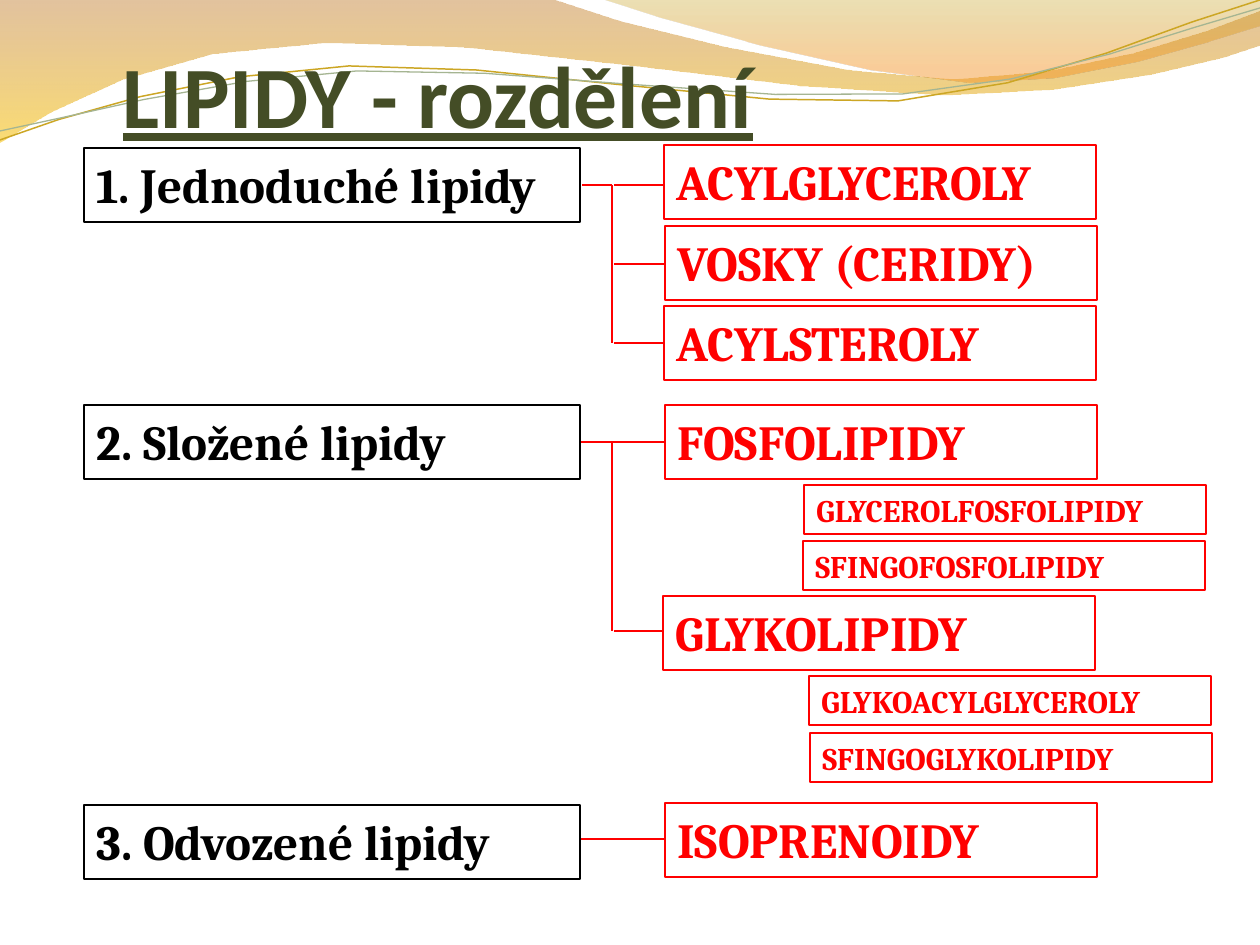
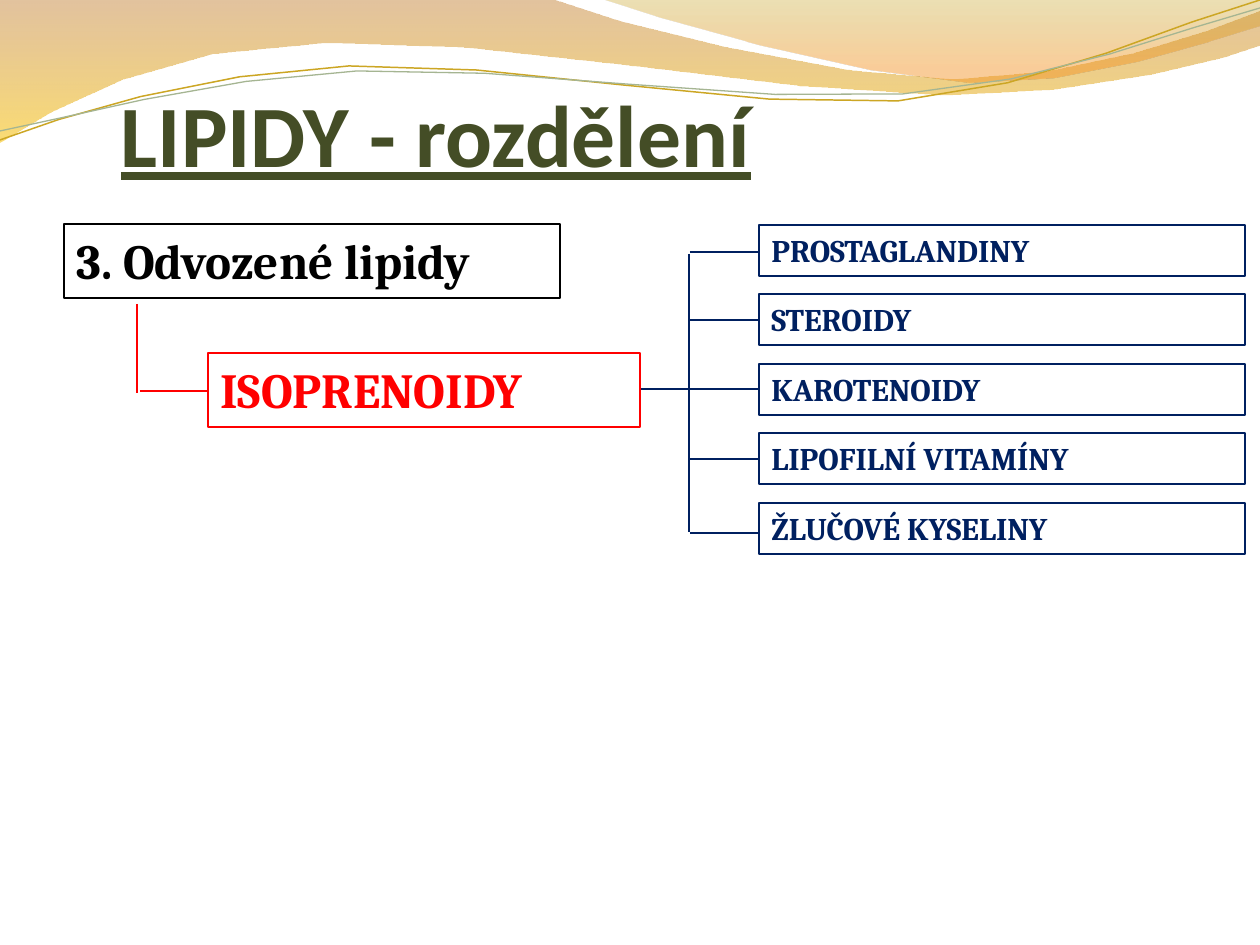
import dataclasses

import pptx
import pptx.dml.color
import pptx.enum.shapes
import pptx.enum.text
import pptx.oxml
import pptx.oxml.ns
import pptx.util

PX = 914400 / 126  # EMU in one px
STEPS = 4  # straight pieces in one curve


@dataclasses.dataclass(frozen=True)
class Theme:
    head: str = "Calibri"
    body: str = "Cambria"
    olive: str = "444D26"
    black: str = "000000"
    red: str = "FF0000"
    navy: str = "002060"
    title: int = 50
    large: int = 28
    small: int = 18
    edge: float = 0.75
    link: float = 1


T = Theme()
rgb = pptx.dml.color.RGBColor.from_string
qn = pptx.oxml.ns.qn


def text(slide, words, x, y, w, h, *, size=T.large, color=T.red, font=T.body,
         wrap=False, title=False):
    """Add bold text: in an outlined box, or as an underlined title."""
    spot = [round(v * PX) for v in (x, y, w, h)]
    if title:
        box = slide.shapes.add_textbox(*spot)
    else:
        box = slide.shapes.add_shape(pptx.enum.shapes.MSO_SHAPE.RECTANGLE, *spot)
        box.shadow.inherit = False
        box.fill.background()
        box.line.color.rgb = rgb(color)
        box.line.width = pptx.util.Pt(T.edge)
    frame = box.text_frame
    frame.word_wrap = wrap
    if title:
        frame.margin_left = frame.margin_right = frame.margin_bottom = 0
        frame.vertical_anchor = pptx.enum.text.MSO_ANCHOR.BOTTOM
    else:
        frame.auto_size = pptx.enum.text.MSO_AUTO_SIZE.SHAPE_TO_FIT_TEXT
        frame.vertical_anchor = pptx.enum.text.MSO_ANCHOR.TOP
    para = frame.paragraphs[0]
    para.alignment = pptx.enum.text.PP_ALIGN.LEFT
    run = para.add_run()
    run.text = words
    run.font.name = font
    run.font.size = pptx.util.Pt(size)
    run.font.bold = True
    if title:
        run.font.underline = True
    run.font.color.rgb = rgb(color)


def link(slide, x1, y1, x2, y2, color=T.red):
    line = slide.shapes.add_connector(
        pptx.enum.shapes.MSO_CONNECTOR.STRAIGHT, *(round(v * PX) for v in (x1, y1, x2, y2)))
    line.line.color.rgb = rgb(color)
    line.line.width = pptx.util.Pt(T.link)
    line._element.spPr.append(pptx.oxml.parse_xml(
        '<a:effectLst xmlns:a="http://schemas.openxmlformats.org/drawingml/2006/main"/>'))


# Each wave: start, then points (2 numbers) or curves (6 numbers), then its look.
# Bands list gradient stops (place, colour, opacity); strokes give colour and width.
waves = [
    ((0, 0), [(554, 0), (600, 21, 837, 79, 955, 79), (1075, 79, 1207, 33, 1260, 11),
              (1260, 45), (1239, 55, 1096, 96, 940, 95), (781, 95, 481, 35, 324, 43),
              (162, 45, 58, 105, 0, 142)],
     {"stops": [(0, "C07A28", 45), (1, "F7BF00", 55)]}),
    ((604, 0), [(641, 14, 859, 78, 969, 82), (1079, 87, 1211, 40, 1260, 26), (1260, 0)],
     {"stops": [(0, "C09709", 30), (0.8, "F59320", 45)]}),
    ((0, 140), [(60, 117, 199, 72, 349, 66), (498, 59, 747, 112, 898, 101),
                (1050, 89, 1182, 19, 1260, 0)],
     {"color": "CCA624", "width": 0.85}),
    ((0, 131), [(59, 121, 207, 77, 357, 71), (508, 64, 752, 106, 903, 94),
                (1053, 84, 1186, 26, 1260, 8)],
     {"color": "A5B592", "width": 0.75}),
]

deck = pptx.Presentation()
deck.slide_width = round(1260 * PX)
deck.slide_height = round(945 * PX)
heads = [(123, 26, 656, 120), (121, 28, 1134, 157)]
slides = []

for place in heads:
    slide = deck.slides.add_slide(deck.slide_layouts[6])
    slides.append(slide)
    for start, parts, look in waves:
        dots = [start]
        for part in parts:
            if len(part) == 2:
                dots.append(part)
                continue
            ax, ay = dots[-1]
            bx, by, cx, cy, dx, dy = part
            for step in range(1, STEPS + 1):
                t = step / STEPS
                u = 1 - t
                k = (u**3, 3 * u * u * t, 3 * u * t * t, t**3)
                dots.append((k[0] * ax + k[1] * bx + k[2] * cx + k[3] * dx,
                             k[0] * ay + k[1] * by + k[2] * cy + k[3] * dy))
        dots = [(round(x * PX), round(y * PX)) for x, y in dots]
        pen = slide.shapes.build_freeform(*dots[0])
        pen.add_line_segments(dots[1:], close="stops" in look)
        wave = pen.convert_to_shape()
        wave.shadow.inherit = False
        if "stops" in look:
            wave.line.fill.background()
            wave.fill.gradient()
            wave.fill.gradient_angle = 270
            for stop, (spot, color, _) in zip(wave.fill.gradient_stops, look["stops"]):
                stop.position = spot
                stop.color.rgb = rgb(color)
            tints = wave._element.spPr.iter(qn("a:srgbClr"))
            for tint, (_, _, alpha) in zip(list(tints), look["stops"]):
                tint.append(pptx.oxml.parse_xml(
                    '<a:alpha xmlns:a="http://schemas.openxmlformats.org/drawingml/2006/main"'
                    f' val="{alpha * 1000}"/>'))
        else:
            wave.fill.background()
            wave.line.color.rgb = rgb(look["color"])
            wave.line.width = pptx.util.Pt(look["width"])
    text(slide, "LIPIDY - rozdělení", *place,
         size=T.title, color=T.olive, font=T.head, wrap=True, title=True)

first, second = slides

# Slide 1: three classes, their groups and subgroups
for words, y in [("1. Jednoduché lipidy", 148), ("2. Složené lipidy", 405),
                 ("3. Odvozené lipidy", 805)]:
    text(first, words, 84, y, 496, 74, color=T.black)

for words, x, y in [("ACYLGLYCEROLY", 664, 145), ("VOSKY (CERIDY)", 665, 226),
                    ("ACYLSTEROLY", 664, 306), ("FOSFOLIPIDY", 665, 405),
                    ("GLYKOLIPIDY", 663, 596), ("ISOPRENOIDY", 665, 803)]:
    text(first, words, x, y, 432, 74)

for words, x, y in [("GLYCEROLFOSFOLIPIDY", 804, 485), ("SFINGOFOSFOLIPIDY", 803, 541),
                    ("GLYKOACYLGLYCEROLY", 809, 676), ("SFINGOGLYKOLIPIDY", 810, 733)]:
    text(first, words, x, y, 402, 49, size=T.small)

for y in (185, 264, 343, 631):
    link(first, 614, y, 664, y)
for top, end in [(185, 343), (442, 631)]:
    link(first, 612, top, 612, end)
for left, right, y in [(582, 612, 185), (581, 665, 442), (581, 665, 839)]:
    link(first, left, y, right, y)

# Slide 2: the isoprenoids
text(second, "3. Odvozené lipidy", 64, 224, 496, 74, color=T.black)
text(second, "ISOPRENOIDY", 208, 353, 432, 74)
link(second, 137, 304, 137, 393)
link(second, 140, 391, 209, 391)

kinds = ["PROSTAGLANDINY", "STEROIDY", "KAROTENOIDY", "LIPOFILNÍ VITAMÍNY", "ŽLUČOVÉ KYSELINY"]
for i, (words, y) in enumerate(zip(kinds, (252, 320, 389, 459, 533))):
    text(second, words, 759, 225 + 278 * i // 4, 486, 51,
         size=T.small, color=T.navy, wrap=True)
    link(second, 690, y, 759, y, T.navy)
link(second, 689, 254, 689, 532, T.navy)
link(second, 641, 389, 712, 389, T.navy)

deck.save("out.pptx")
